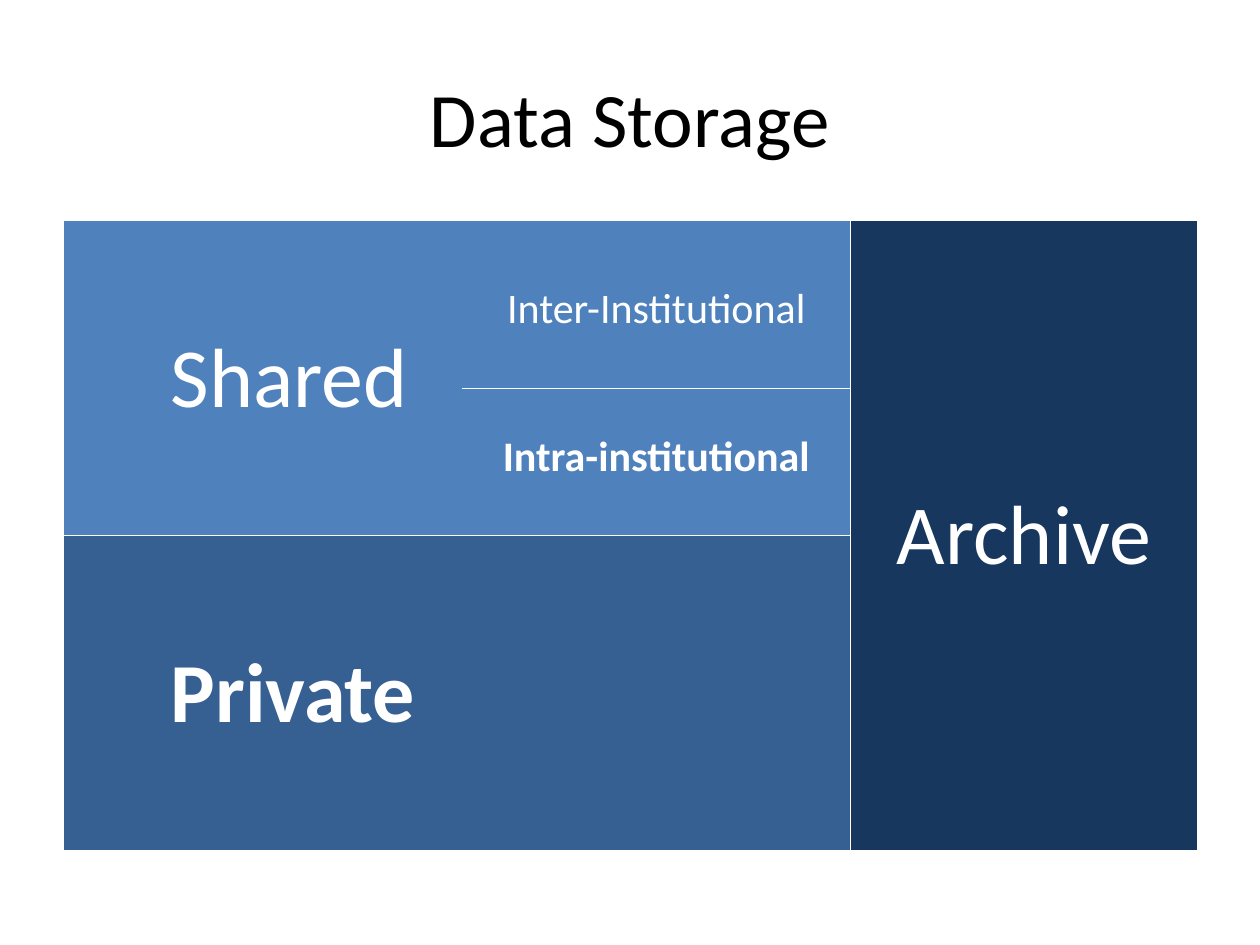
from dataclasses import dataclass
from typing import Optional

from lxml.etree import SubElement
from pptx import Presentation
from pptx.dml.color import RGBColor
from pptx.enum.text import MSO_ANCHOR, PP_ALIGN
from pptx.oxml.ns import qn
from pptx.util import Cm, Pt


@dataclass(frozen=True)
class Theme:
    font: str = "Calibri"
    black: str = "000000"
    white: str = "FFFFFF"
    light_blue: str = "4F81BD"
    middle_blue: str = "376092"
    dark_blue: str = "17375E"
    title_size: int = 44
    label_size: int = 48
    detail_size: int = 24
    border_width: float = 1


@dataclass(frozen=True)
class Area:
    text: str
    row: int
    column: int
    fill: str
    size: int
    borders: str
    bold: bool = False
    indent: Optional[float] = None
    row_span: int = 1


@dataclass(frozen=True)
class Grid:
    left: float
    top: float
    columns: tuple[float, ...]
    rows: tuple[float, ...]
    areas: tuple[Area, ...]


THEME = Theme()

STORAGE = Grid(1.27, 4.45, (15.88, 6.99), (6.35, 6.35), (
    Area("Shared", 0, 0, THEME.light_blue, THEME.label_size, "LRTB", indent=2.17),
    Area("Archive", 0, 1, THEME.dark_blue, THEME.label_size, "LRTB", row_span=2),
    Area("Private", 1, 0, THEME.middle_blue, THEME.label_size, "LRTB", bold=True, indent=2.17),
))

SHARED_DETAIL = Grid(9.32, 4.65, (7.82,), (3.18, 2.77), (
    Area("Inter-Institutional", 0, 0, THEME.light_blue, THEME.detail_size, "B"),
    Area("Intra-institutional", 1, 0, THEME.light_blue, THEME.detail_size, "T", bold=True),
))


def format_text(frame, size: int, color: str, align: PP_ALIGN, bold: bool = False) -> None:
    para = frame.paragraphs[0]
    para.alignment = align
    for span in para.runs:
        span.font.name = THEME.font
        span.font.size = Pt(size)
        span.font.bold = bold
        span.font.color.rgb = RGBColor.from_string(color)


def set_borders(cell, sides: str) -> None:
    properties = cell._tc.get_or_add_tcPr()
    for position, side in enumerate("LRTB"):
        line = SubElement(properties, qn(f"a:ln{side}"), w=str(Pt(THEME.border_width)))
        if side in sides:
            solid = SubElement(line, qn("a:solidFill"))
            SubElement(solid, qn("a:srgbClr"), val=THEME.white)
        else:
            SubElement(line, qn("a:noFill"))
        properties.insert(position, line)


def draw_area(table, area: Area) -> None:
    cell = table.cell(area.row, area.column)
    for offset in range(area.row_span):
        part = table.cell(area.row + offset, area.column)
        part.fill.solid()
        part.fill.fore_color.rgb = RGBColor.from_string(area.fill)
        set_borders(part, area.borders)
    if area.row_span > 1:
        cell.merge(table.cell(area.row + area.row_span - 1, area.column))
    cell.vertical_anchor = MSO_ANCHOR.MIDDLE
    cell.text_frame.text = area.text
    align = PP_ALIGN.CENTER
    if area.indent is not None:
        cell.margin_left = Cm(area.indent)
        align = PP_ALIGN.LEFT
    format_text(cell.text_frame, area.size, THEME.white, align, area.bold)


def draw_grid(page, grid: Grid) -> None:
    table = page.shapes.add_table(
        len(grid.rows), len(grid.columns), Cm(grid.left), Cm(grid.top),
        Cm(sum(grid.columns)), Cm(sum(grid.rows)),
    ).table
    table.first_row = False
    table.horz_banding = False
    for column, width in zip(table.columns, grid.columns):
        column.width = Cm(width)
    for row, height in zip(table.rows, grid.rows):
        row.height = Cm(height)
    for area in grid.areas:
        draw_area(table, area)


def draw_title(page, text: str) -> None:
    title = page.shapes.title
    title.left, title.top, title.width, title.height = Cm(1.27), Cm(0.76), Cm(22.86), Cm(3.18)
    title.text_frame.text = text
    title.text_frame.vertical_anchor = MSO_ANCHOR.MIDDLE
    format_text(title.text_frame, THEME.title_size, THEME.black, PP_ALIGN.CENTER)


def main() -> None:
    deck = Presentation()
    deck.slide_width, deck.slide_height = Cm(25.4), Cm(19.05)
    page = deck.slides.add_slide(deck.slide_layouts.get_by_name("Title Only"))
    draw_title(page, "Data Storage")
    for grid in (STORAGE, SHARED_DETAIL):
        draw_grid(page, grid)
    deck.save("out.pptx")


if __name__ == "__main__":
    main()
